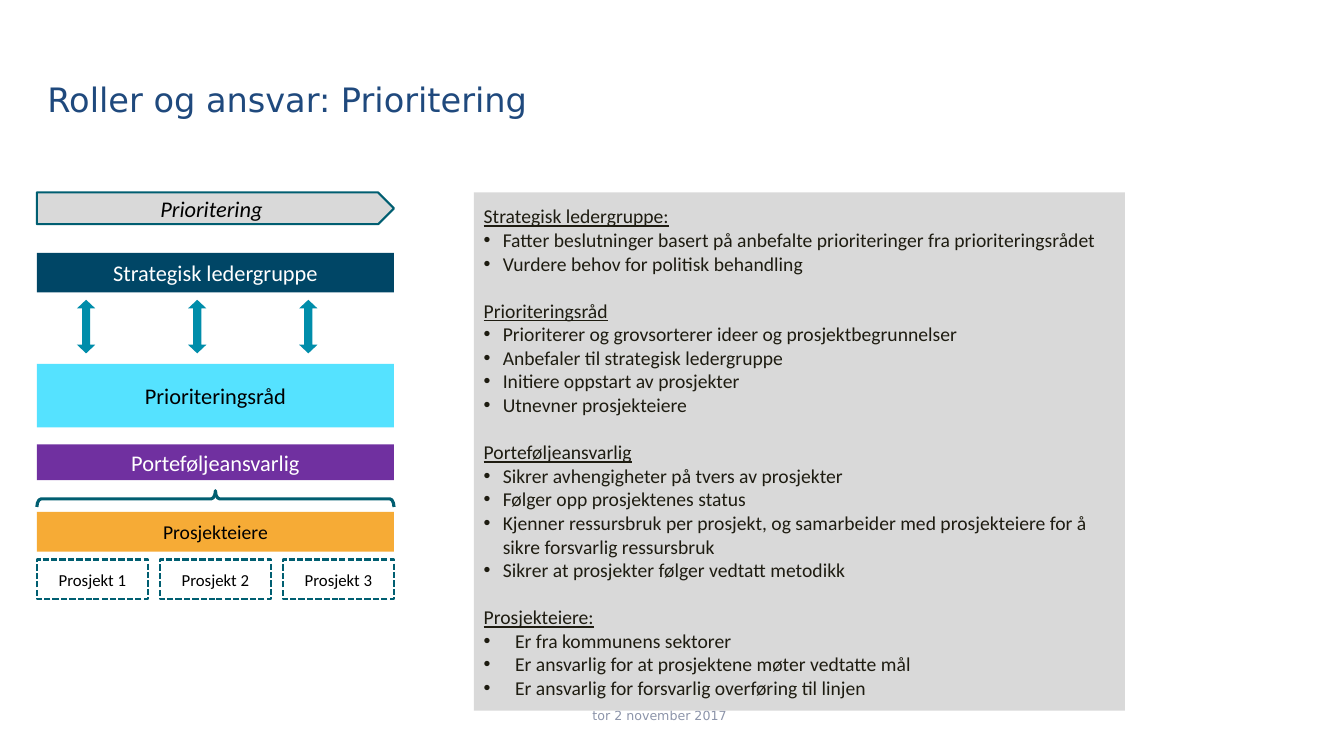
import lxml.etree
import pptx
import pptx.dml.color
import pptx.enum.dml
import pptx.enum.shapes
import pptx.enum.text
import pptx.oxml.ns
import pptx.util

Cm = pptx.util.Cm
Pt = pptx.util.Pt
PRESET = pptx.enum.shapes.MSO_SHAPE
ALIGN = pptx.enum.text.PP_ALIGN
ANCHOR = pptx.enum.text.MSO_ANCHOR

TITLE = "Roller og ansvar: Prioritering"
DATE = "tor 2 november 2017"
PROJECTS = ["Prosjekt 1", "Prosjekt 2", "Prosjekt 3"]

THEME = {
    "heading_font": "DejaVu Sans", "body_font": "Calibri",
    "title": "1F497D", "date": "8D95AA", "ink": "1E1C11",
    "black": "000000", "white": "FFFFFF", "grey": "D9D9D9",
    "navy": "004666", "cyan": "55E2FF", "purple": "7030A0",
    "orange": "F6AB36", "outline": "005E71", "arrow": "008DAA",
    "title_size": 24, "bar_size": 16, "owner_size": 14,
    "list_size": 14, "project_size": 12, "date_size": 9,
}

BARS = [
    ("Prioritering", 4.85, 0.8, PRESET.PENTAGON, "grey", "black", "bar_size"),
    ("Strategisk ledergruppe", 6.37, 1, PRESET.RECTANGLE, "navy", "white", "bar_size"),
    ("Prioriteringsråd", 9.17, 1.6, PRESET.RECTANGLE, "cyan", "black", "bar_size"),
    ("Porteføljeansvarlig", 11.2, 0.9, PRESET.RECTANGLE, "purple", "white", "bar_size"),
    ("Prosjekteiere", 12.9, 1, PRESET.RECTANGLE, "orange", "black", "owner_size"),
]

ROLES = [
    ("Strategisk ledergruppe:", 0.48, [
        "Fatter beslutninger basert på anbefalte prioriteringer fra prioriteringsrådet",
        "Vurdere behov for politisk behandling",
    ]),
    ("Prioriteringsråd", 0.48, [
        "Prioriterer og grovsorterer ideer og prosjektbegrunnelser",
        "Anbefaler til strategisk ledergruppe",
        "Initiere oppstart av prosjekter",
        "Utnevner prosjekteiere",
    ]),
    ("Porteføljeansvarlig", 0.48, [
        "Sikrer avhengigheter på tvers av prosjekter",
        "Følger opp prosjektenes status",
        "Kjenner ressursbruk per prosjekt, og samarbeider med prosjekteiere for å "
        "sikre forsvarlig ressursbruk",
        "Sikrer at prosjekter følger vedtatt metodikk",
    ]),
    ("Prosjekteiere:", 0.79, [
        "Er fra kommunens sektorer",
        "Er ansvarlig for at prosjektene møter vedtatte mål",
        "Er ansvarlig for forsvarlig overføring til linjen",
    ]),
]

COLUMN_LEFT, COLUMN_WIDTH = 0.93, 9
PROJECT_TOP, PROJECT_WIDTH, PROJECT_HEIGHT = 14.1, 2.8, 1
ARROW_CENTER, ARROW_PITCH, ARROW_LENGTH, ARROW_WIDTH = (2.17, 8.23), 2.8, 1.35, 0.46
BRACE_MIDDLE, BRACE_DEPTH = 12.57, 0.41


def apply(target, formats):
    for name, value in formats.items():
        setattr(target, name, value)


def color(name):
    return pptx.dml.color.RGBColor.from_string(THEME[name])


def place(shape, left, top, width, height):
    apply(shape, {"left": Cm(left), "top": Cm(top), "width": Cm(width), "height": Cm(height)})


def write(paragraph, text, size, ink, font="body_font", **formats):
    run = paragraph.add_run()
    run.text = text
    apply(run.font, {"name": THEME[font], "size": Pt(THEME[size]), **formats})
    run.font.color.rgb = color(ink)


def write_centered(shape, text, size, ink, font="body_font", **formats):
    apply(shape.text_frame, {"word_wrap": True, "vertical_anchor": ANCHOR.MIDDLE})
    paragraph = shape.text_frame.paragraphs[0]
    paragraph.alignment = ALIGN.CENTER
    write(paragraph, text, size, ink, font, **formats)


def add_shape(slide, preset, box, fill=None, line_width=None):
    shape = slide.shapes.add_shape(preset, *map(Cm, box))
    shape.shadow.inherit = False
    if fill:
        shape.fill.solid()
        shape.fill.fore_color.rgb = color(fill)
    else:
        shape.fill.background()
    if line_width:
        shape.line.color.rgb = color("outline")
        shape.line.width = Pt(line_width)
    else:
        shape.line.fill.background()
    return shape


def set_bullet(paragraph, indent):
    properties = paragraph._p.get_or_add_pPr()
    properties.set("marL", str(Cm(indent)))
    properties.set("indent", str(-Cm(indent)))
    tag = "a:buChar" if indent else "a:buNone"
    bullet = lxml.etree.SubElement(properties, pptx.oxml.ns.qn(tag))
    if indent:
        bullet.set("char", "•")


def add_bars(slide):
    for text, top, height, preset, fill, ink, size in BARS:
        pointed = preset == PRESET.PENTAGON
        box = (COLUMN_LEFT, top, COLUMN_WIDTH, height)
        bar = add_shape(slide, preset, box, fill, 1.5 if pointed else None)
        write_centered(bar, text, size, ink, italic=pointed)


def add_projects(slide):
    pitch = (COLUMN_WIDTH - PROJECT_WIDTH) / (len(PROJECTS) - 1)
    for index, text in enumerate(PROJECTS):
        box = (COLUMN_LEFT + index * pitch, PROJECT_TOP, PROJECT_WIDTH, PROJECT_HEIGHT)
        project = add_shape(slide, PRESET.RECTANGLE, box, line_width=1.5)
        project.line.dash_style = pptx.enum.dml.MSO_LINE.SQUARE_DOT
        write_centered(project, text, "project_size", "black")


def add_links(slide):
    center_x, center_y = ARROW_CENTER
    for index in range(3):
        left = center_x + index * ARROW_PITCH - ARROW_LENGTH / 2
        box = (left, center_y - ARROW_WIDTH / 2, ARROW_LENGTH, ARROW_WIDTH)
        arrow = add_shape(slide, PRESET.LEFT_RIGHT_ARROW, box, "arrow")
        arrow.rotation = 90
        arrow.adjustments[0], arrow.adjustments[1] = 0.45, 0.47
    left = COLUMN_LEFT + (COLUMN_WIDTH - BRACE_DEPTH) / 2
    box = (left, BRACE_MIDDLE - COLUMN_WIDTH / 2, BRACE_DEPTH, COLUMN_WIDTH)
    brace = add_shape(slide, PRESET.RIGHT_BRACE, box, line_width=2.25)
    brace.rotation = 270
    brace.adjustments[0], brace.adjustments[1] = 0.26, 0.5


def fill_panel(panel):
    place(panel, 11.94, 4.85, 16.41, 13.06)
    panel.fill.solid()
    panel.fill.fore_color.rgb = color("grey")
    frame = panel.text_frame
    apply(frame, {
        "word_wrap": True, "auto_size": pptx.enum.text.MSO_AUTO_SIZE.NONE,
        "vertical_anchor": ANCHOR.TOP, "margin_left": Cm(0.25),
        "margin_right": Cm(0.25), "margin_top": Cm(0.3), "margin_bottom": Cm(0.13),
    })
    for role_index, (role, indent, duties) in enumerate(ROLES):
        for index, text in enumerate([role, *duties]):
            first = role_index == index == 0
            paragraph = frame.paragraphs[0] if first else frame.add_paragraph()
            set_bullet(paragraph, indent if index else 0)
            gap = 17 if role_index and index == 0 else 0
            apply(paragraph, {"space_before": Pt(gap), "space_after": Pt(0),
                              "line_spacing": 1.0, "alignment": ALIGN.LEFT})
            write(paragraph, text, "list_size", "ink", underline=index == 0)


def main():
    presentation = pptx.Presentation()
    apply(presentation, {"slide_width": Cm(33.87), "slide_height": Cm(19.05)})
    slide = presentation.slides.add_slide(presentation.slide_layouts[1])
    title, panel = slide.placeholders
    place(title, 0.94, 0.91, 25.63, 3.18)
    write_centered(title, TITLE, "title_size", "title", "heading_font")
    title.text_frame.paragraphs[0].alignment = ALIGN.LEFT
    date = slide.shapes.add_textbox(Cm(12.67), Cm(17.53), Cm(7.9), Cm(1.02))
    write_centered(date, DATE, "date_size", "date", "heading_font")
    add_bars(slide)
    add_projects(slide)
    add_links(slide)
    fill_panel(panel)
    slide.shapes.element.append(panel.element)
    presentation.save("out.pptx")


if __name__ == "__main__":
    main()
